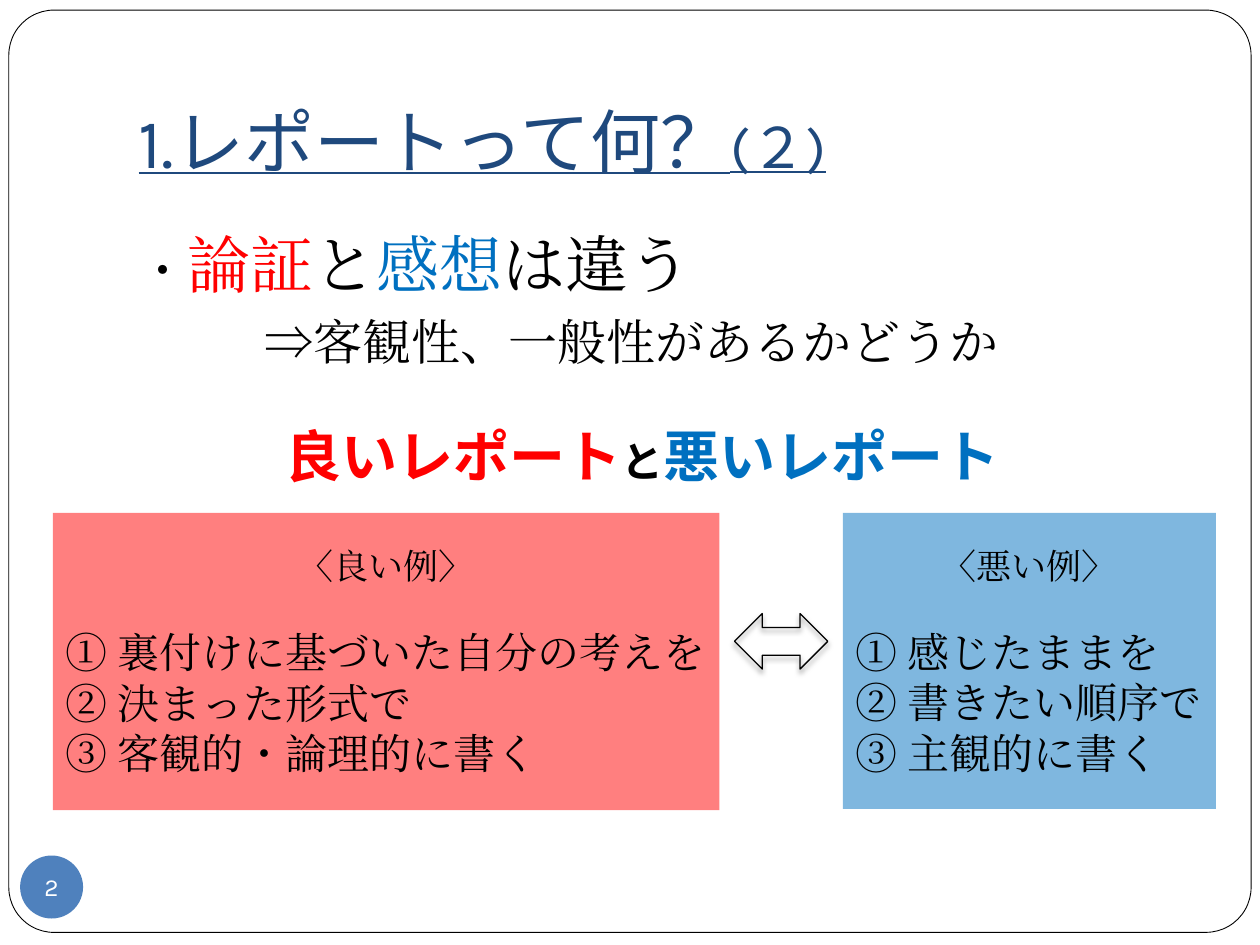
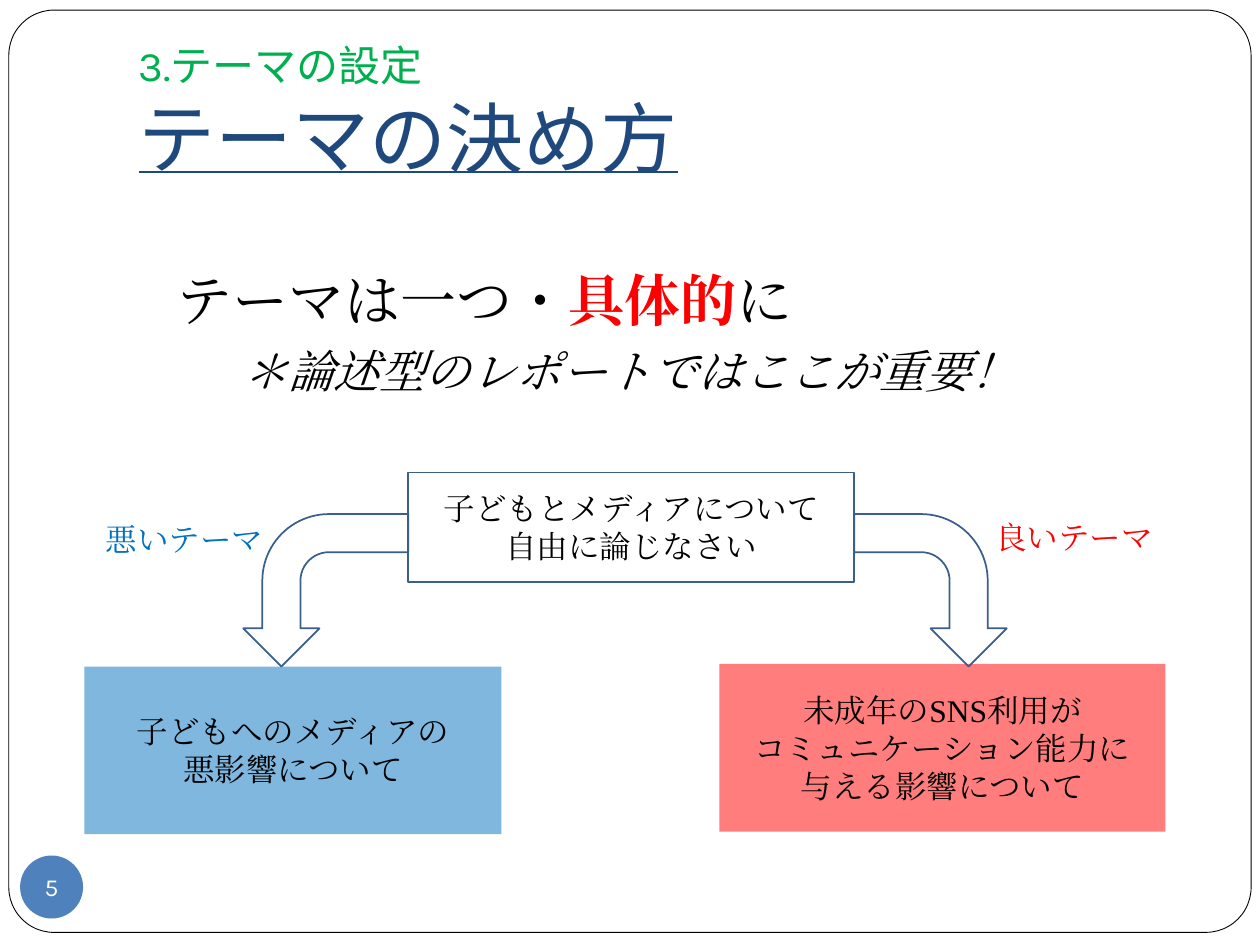
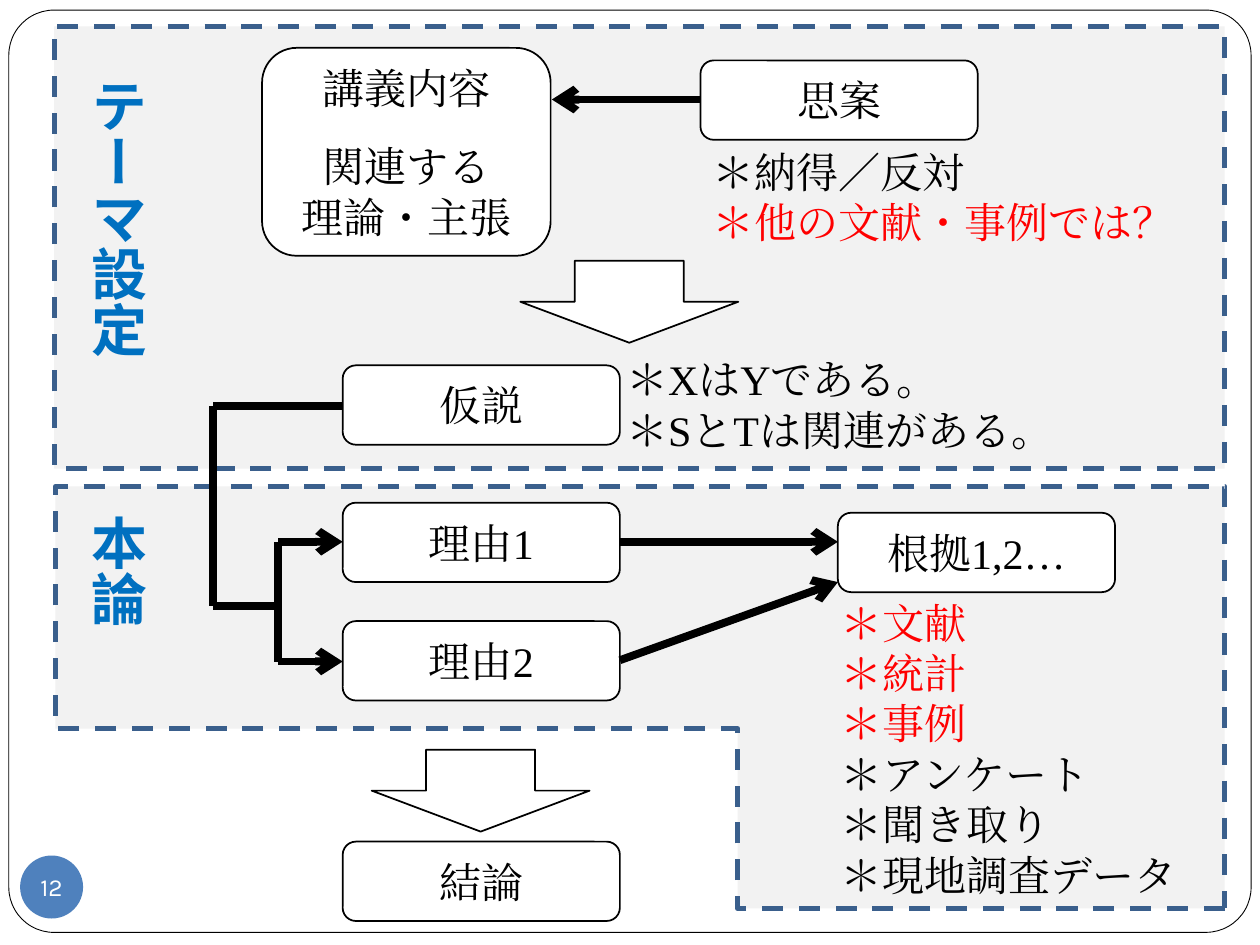
from lxml.etree import SubElement
from pptx import Presentation
from pptx.dml.color import RGBColor
from pptx.enum.dml import MSO_LINE_DASH_STYLE as Dash
from pptx.enum.shapes import MSO_CONNECTOR as Conn, MSO_SHAPE as Kind
from pptx.enum.text import MSO_ANCHOR as Anchor, MSO_AUTO_SIZE as Auto, PP_ALIGN as Align
from pptx.oxml.ns import qn
from pptx.util import Inches, Pt

BLACK = RGBColor(0, 0, 0)
WHITE = RGBColor(255, 255, 255)
RED = RGBColor(255, 0, 0)
BLUE = RGBColor(0x00, 0x70, 0xC0)
NAVY = RGBColor(0x1F, 0x49, 0x7D)
GREEN = RGBColor(0x00, 0xB0, 0x50)
EDGE = RGBColor(0x3A, 0x5F, 0x8C)
BADGE = RGBColor(0x4F, 0x81, 0xBD)
GREY = RGBColor(0xF2, 0xF2, 0xF2)

SERIF, SANS, HEAD, GOTHIC = "Times New Roman", "Arial", "Karla", "Noto Sans CJK JP"
NODE = (2.2, 0.63)
DROP = (1.73, 0.65)


def style(run, size, color=BLACK, face=SERIF, bold=False, italic=False, under=False):
    font = run.font
    font.size, font.name, font.color.rgb = Pt(size), face, color
    font.bold, font.italic, font.underline = bold, italic, under
    SubElement(font._element, qn("a:ea")).set("typeface", face)


def write(frame, lines, align=Align.LEFT, **base):
    """Fill a frame; a line is a string or a list of (text, own style) runs."""
    for i, line in enumerate(lines):
        para = frame.add_paragraph() if i else frame.paragraphs[0]
        para.alignment = align
        for text, own in [(line, {})] if isinstance(line, str) else line:
            run = para.add_run()
            run.text = text
            style(run, **{**base, **own})
    return frame.paragraphs


def lengths(box):
    return [Inches(n) for n in box]


def shape(slide, kind, box, fill=None, line=None, width=1, alpha=None):
    item = slide.shapes.add_shape(kind, *lengths(box))
    item.shadow.inherit = False
    if fill is None:
        item.fill.background()
    else:
        item.fill.solid()
        item.fill.fore_color.rgb = fill
    if alpha:
        tint = item._element.spPr.find(qn("a:solidFill")).find(qn("a:srgbClr"))
        SubElement(tint, qn("a:alpha")).set("val", str(alpha * 1000))
    if line is None:
        item.line.fill.background()
    else:
        item.line.color.rgb = line
        item.line.width = Pt(width)
    item.text_frame.vertical_anchor = Anchor.MIDDLE
    return item


def label(slide, box, lines, **base):
    frame = slide.shapes.add_textbox(*lengths(box)).text_frame
    frame.word_wrap = True
    return write(frame, lines, **base)


def node(slide, box, lines):
    item = shape(slide, Kind.ROUNDED_RECTANGLE, box, WHITE, BLACK)
    return write(item.text_frame, lines, Align.CENTER, size=24)


def stroke(slide, x1, y1, x2, y2, arrow=False):
    item = slide.shapes.add_connector(Conn.STRAIGHT, *lengths((x1, y1, x2, y2)))
    item.line.color.rgb = BLACK
    item.line.width = Pt(4.5)
    props = item._element.spPr
    if arrow:
        SubElement(props.find(qn("a:ln")), qn("a:tailEnd")).set("type", "arrow")
    SubElement(props, qn("a:effectLst"))


def upright(slide, box, text):
    """Vertical heading of a panel."""
    paras = label(slide, box, [text], align=Align.CENTER, size=32, color=BLUE,
                  face=SANS, bold=True)
    paras[0]._p.getparent().find(qn("a:bodyPr")).set("vert", "eaVert")


def page(deck, layout):
    slide = deck.slides.add_slide(deck.slide_layouts[layout])
    frame = shape(slide, Kind.ROUNDED_RECTANGLE, (0.07, 0.08, 9.86, 7.32), None, BLACK, 0.5)
    frame.adjustments[0] = 0.049
    return slide


def badge(slide, number):
    text = shape(slide, Kind.OVAL, (0.16, 6.79, 0.5, 0.5), BADGE).text_frame
    text.margin_left = text.margin_right = text.margin_top = text.margin_bottom = 0
    text.word_wrap = False
    write(text, [str(number)], Align.CENTER, size=14, color=WHITE, face=HEAD)


def title(slide, box, lines):
    item = slide.shapes.title
    item.left, item.top, item.width, item.height = lengths(box)
    text = item.text_frame
    text.auto_size, text.vertical_anchor = Auto.NONE, Anchor.BOTTOM
    text.margin_bottom = Inches(0.1)
    for para in write(text, lines, size=40, color=NAVY, face=HEAD):
        para.space_before = Pt(0)


def lead(slide, box, lines, **base):
    paras = label(slide, box, lines, **base)
    for para in paras:
        para.space_before = Pt(5.8)
    return paras


def example(slide, box, fill, head, items):
    item = shape(slide, Kind.RECTANGLE, box, fill, alpha=50)
    paras = write(item.text_frame, [[(head, {"size": 20})], *items], size=24)
    paras[0].alignment = Align.CENTER
    paras[1].space_before = Pt(23)


def compare(slide, x, y):
    """Good and bad report side by side, with a two-way arrow between."""
    example(slide, (x, y, 5.29, 2.36), RED, "〈良い例〉",
            ["① 裏付けに基づいた自分の考えを", "② 決まった形式で", "③ 客観的・論理的に書く"])
    example(slide, (x + 6.27, y, 2.96, 2.35), BLUE, "〈悪い例〉",
            ["① 感じたままを", "② 書きたい順序で", "③ 主観的に書く"])
    arrow = shape(slide, Kind.LEFT_RIGHT_ARROW, (x + 5.41, y + 0.8, 0.74, 0.44),
                  None, BLACK, 0.75)
    effects = arrow._element.spPr.find(qn("a:effectLst"))
    shade = SubElement(effects, qn("a:outerShdw"), blurRad=str(Pt(3)), dist=str(Pt(2)),
                       dir="5400000", rotWithShape="0")
    tint = SubElement(shade, qn("a:srgbClr"), val=str(BLACK))
    SubElement(tint, qn("a:alpha"), val="50000")


def topics(slide, x, y):
    """One broad question that leads to a bad and a good theme."""
    boxes = [
        ((x + 2.57, y, 3.54, 0.87), None, EDGE, None,
         ["子どもとメディアについて", "自由に論じなさい"]),
        ((x, y + 1.54, 3.31, 1.33), BLUE, None, 50,
         ["子どもへのメディアの", "悪影響について"]),
        ((x + 5.04, y + 1.52, 3.54, 1.33), RED, None, 51,
         ["未成年のSNS利用が", "コミュニケーション能力に", "与える影響について"]),
    ]
    for box, fill, line, alpha, lines in boxes:
        item = shape(slide, Kind.RECTANGLE, box, fill, line, alpha=alpha)
        write(item.text_frame, lines, Align.CENTER, size=18)
    right = shape(slide, Kind.BENT_ARROW, (x + 6.11, y + 0.33, 1.21, 1.21), None, EDGE)
    right.rotation = 90
    left = shape(slide, Kind.BENT_ARROW, (x + 1.31, y + 0.28, 1.21, 1.31), None, EDGE)
    left.rotation = 270
    left._element.spPr.find(qn("a:xfrm")).set("flipH", "1")
    label(slide, (x + 7.13, y + 0.31, 1.47, 0.4), ["良いテーマ"], size=18, color=RED)
    label(slide, (x + 0.07, y + 0.33, 1.59, 0.4), ["悪いテーマ"], size=18, color=BLUE)


def panel(slide, kind, box):
    item = shape(slide, kind, box, GREY, EDGE, 3)
    item.line.dash_style = Dash.DASH
    return item


def theme(slide, x, y):
    """Upper panel: from lecture and thought to a hypothesis."""
    panel(slide, Kind.RECTANGLE, (x, y, 9.29, 3.51))
    paras = node(slide, (x + 1.65, y + 0.17, 2.29, 1.65),
                 ["講義内容", "関連する", "理論・主張"])
    paras[1].space_before = Pt(16)
    node(slide, (x + 5.13, y + 0.27, *NODE), ["思案"])
    label(slide, (x + 5.13, y + 0.9, 3.98, 0.91),
          ["＊納得／反対", [("＊他の文献・事例では？", {"color": RED})]], size=24)
    node(slide, (x + 2.29, y + 2.69, *NODE), ["仮説"])
    label(slide, (x + 4.44, y + 2.55, 3.75, 0.91),
          ["＊XはYである。", "＊SとTは関連がある。"], size=24)
    upright(slide, (x + 0.08, y + 0.31, 0.74, 2.84), "テーマ設定")
    stroke(slide, x + 5.13, y + 0.58, x + 3.95, y + 0.58, True)
    shape(slide, Kind.DOWN_ARROW, (x + 3.7, y + 1.86, *DROP), WHITE, BLACK)


def proof(slide, x, y):
    """Lower panel: reasons and evidence, then the conclusion."""
    back = panel(slide, Kind.CORNER, (x, y, 9.28, 3.35))
    back.rotation = 180
    back.adjustments[0], back.adjustments[1] = 0.574, 1.154
    for dx, dy, text in [(2.28, 0.13, "理由1"), (2.28, 1.07, "理由2"),
                         (6.21, 0.21, "根拠1,2…"), (2.28, 2.82, "結論")]:
        node(slide, (x + dx, y + dy, *NODE), [text])
    sources = [[(text, {"color": RED})] for text in ("＊文献", "＊統計", "＊事例")]
    label(slide, (x + 6.13, y + 0.83, 3.27, 2.52),
          sources + ["＊アンケート", "＊聞き取り", "＊現地調査データ"], size=24)
    upright(slide, (x + 0.07, y + 0.13, 0.74, 1.78), "本論")
    shape(slide, Kind.DOWN_ARROW, (x + 2.51, y + 2.09, *DROP), WHITE, BLACK)
    for x1, y1, x2, y2, arrow in [
        (2.28, -0.64, 1.25, -0.64, False),
        (1.25, -0.64, 1.25, 0.95, False),
        (1.25, 0.95, 1.77, 0.95, False),
        (1.77, 0.44, 1.77, 1.39, False),
        (1.77, 0.44, 2.28, 0.44, True),
        (1.77, 1.39, 2.28, 1.39, True),
        (4.48, 0.44, 6.21, 0.44, True),
        (4.48, 1.38, 6.21, 0.76, True),
    ]:
        stroke(slide, x + x1, y + y1, x + x2, y + y2, arrow)


def report(deck):
    slide = page(deck, 5)
    title(slide, (1, 0.3, 8.5, 1.25),
          [[("1.レポートって何？", {"under": True}), ("(２)", {"size": 32, "under": True})]])
    paras = lead(slide, (1, 1.74, 8.5, 1.38), [
        [("・", {"size": 28}), ("論証", {"color": RED}), ("と", {}),
         ("感想", {"color": BLUE}), ("は違う", {})],
        [("⇒客観性、一般性があるかどうか", {"size": 28})]], size=36)
    paras[1]._p.get_or_add_pPr().set("marL", str(Inches(1)))
    compare(slide, 0.42, 4.07)
    label(slide, (1.85, 3.3, 6.5, 0.64),
          [[("良いレポート", {"color": RED}), ("と", {"size": 24}),
            ("悪いレポート", {"color": BLUE})]],
          align=Align.CENTER, size=32, face=GOTHIC, bold=True)
    badge(slide, 2)


def choice(deck):
    slide = page(deck, 5)
    title(slide, (1, 0.44, 7.86, 1.11),
          [[("3.テーマの設定", {"size": 24, "color": GREEN})],
           [("テーマの決め方", {"size": 44, "under": True})]])
    paras = lead(slide, (1.3, 2.06, 7.4, 1.14), [
        [("テーマは一つ・", {}), ("具体的", {"color": RED, "bold": True}), ("に", {})],
        [("＊論述型のレポートではここが重要！", {"size": 26, "italic": True})]], size=32)
    paras[1].alignment = Align.CENTER
    topics(slide, 0.67, 3.75)
    badge(slide, 5)


def outline(deck):
    slide = page(deck, 6)
    theme(slide, 0.43, 0.21)
    proof(slide, 0.44, 3.86)
    badge(slide, 12)


def main():
    deck = Presentation()
    deck.slide_width, deck.slide_height = Inches(10), Inches(7.5)
    for build in (report, choice, outline):
        build(deck)
    deck.save("out.pptx")


if __name__ == "__main__":
    main()
